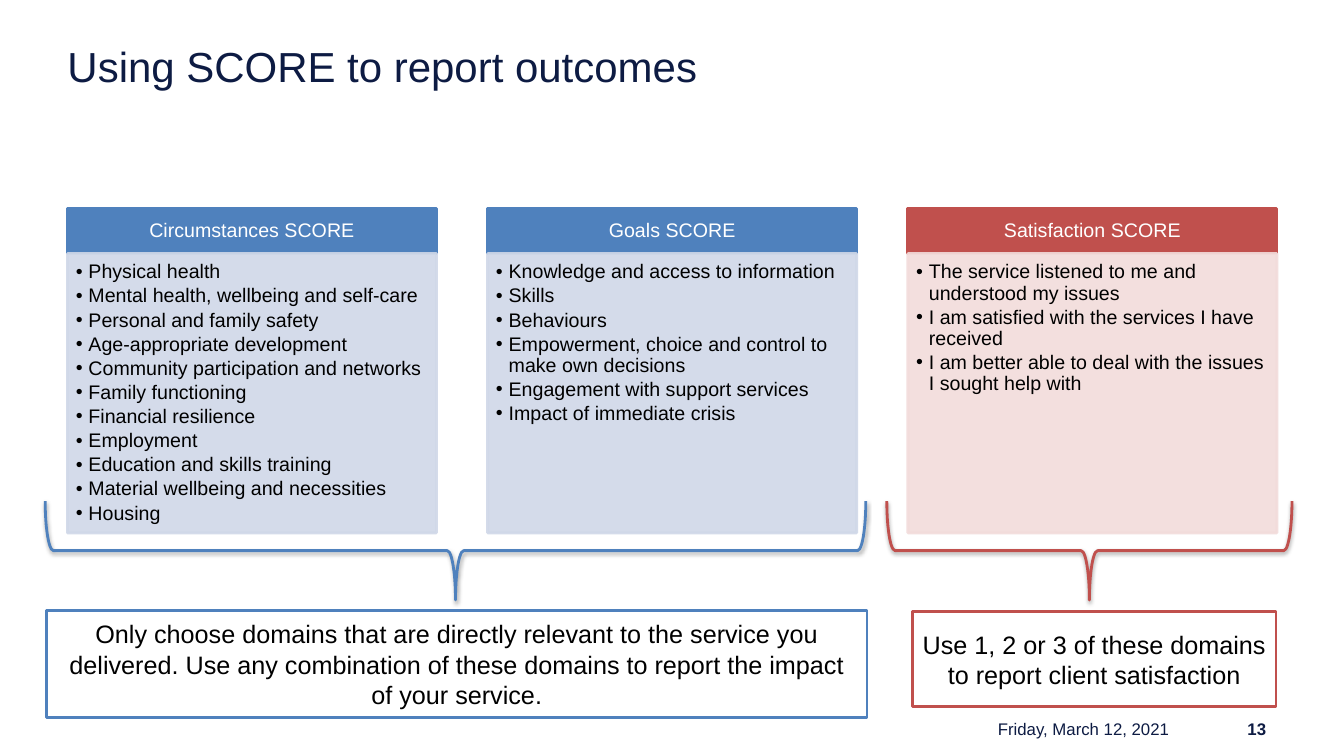
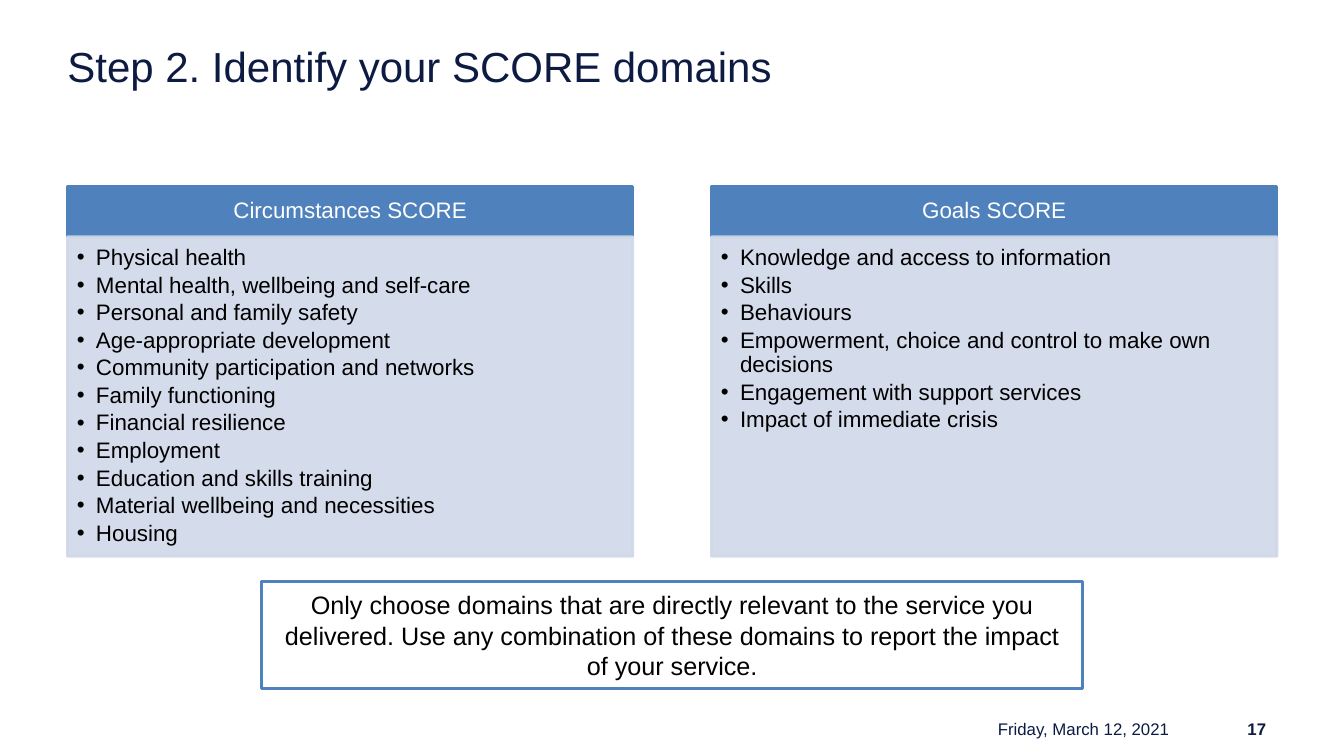
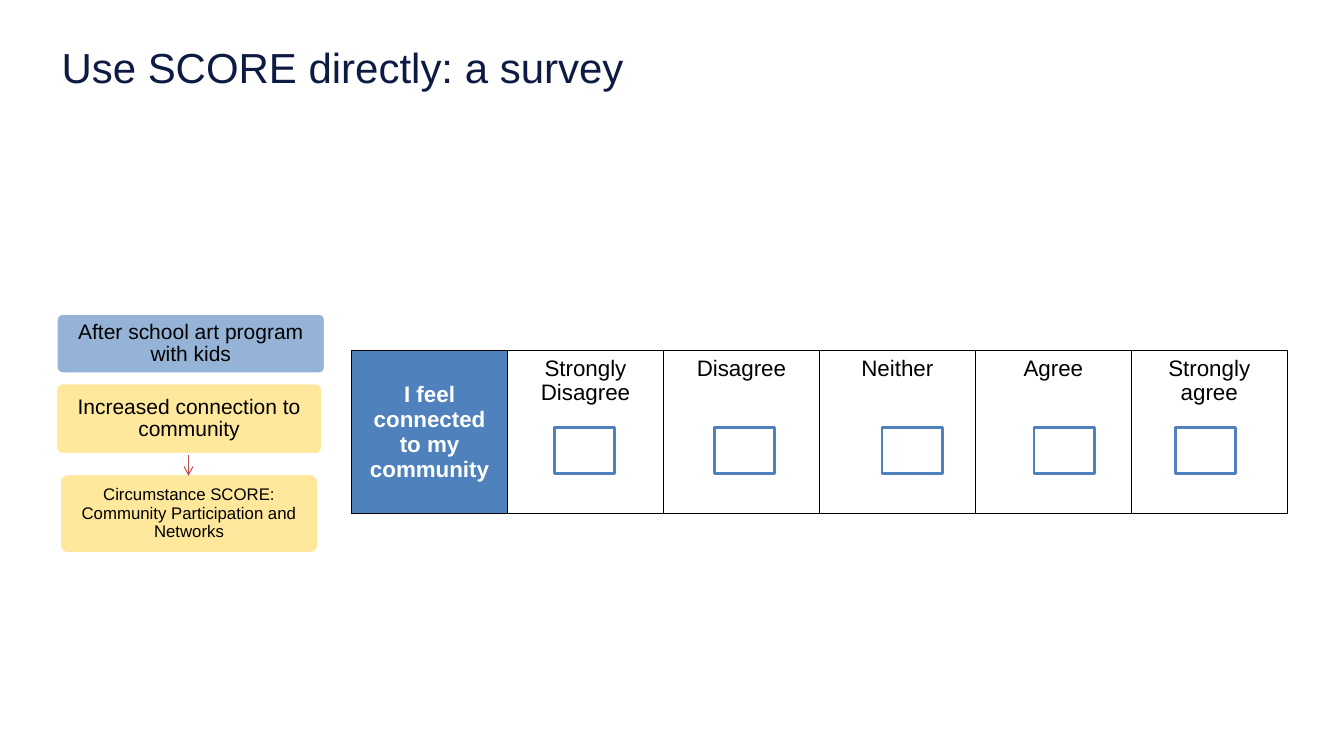
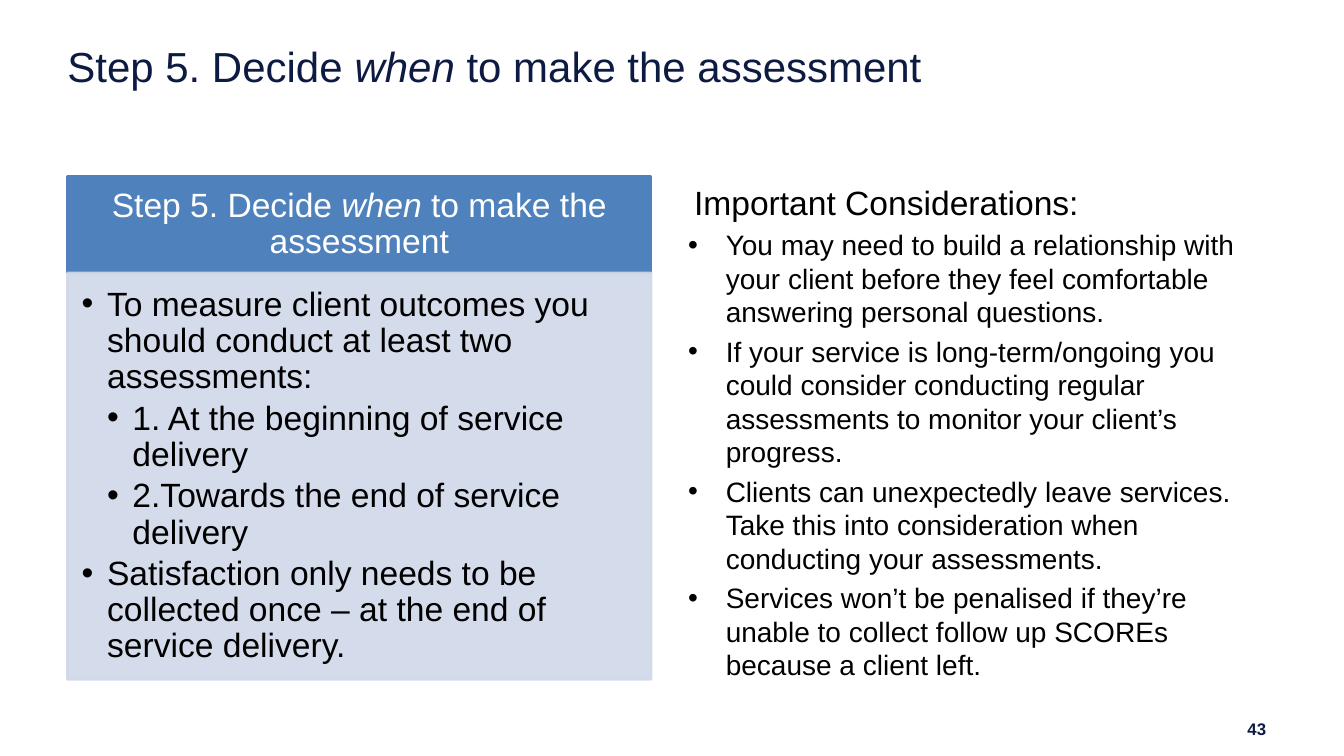
from dataclasses import dataclass
from typing import Any, NamedTuple

from lxml import etree
from pptx import Presentation
from pptx.dml.color import RGBColor
from pptx.enum.shapes import MSO_CONNECTOR, MSO_SHAPE
from pptx.enum.text import MSO_ANCHOR, MSO_AUTO_SIZE, PP_ALIGN
from pptx.oxml.ns import qn
from pptx.slide import Slide
from pptx.util import Cm, Pt

LEFT, MID, RIGHT = PP_ALIGN.LEFT, PP_ALIGN.CENTER, PP_ALIGN.RIGHT
TOP, CENTRE = MSO_ANCHOR.TOP, MSO_ANCHOR.MIDDLE
RECT, ROUND, BRACE = MSO_SHAPE.RECTANGLE, MSO_SHAPE.ROUNDED_RECTANGLE, MSO_SHAPE.LEFT_BRACE
STRAIGHT, FIXED = MSO_CONNECTOR.STRAIGHT, MSO_AUTO_SIZE.NONE
TITLE_ONLY, TITLE_BODY = 5, 1

FONT = "Arial"
NAVY, BLUE, RED = "0D1B43", "4F81BD", "C0504D"
PALE, PINK, SKY, SAND = "D0D8E8", "F2DCDB", "95B3D7", "FFE79B"
BLACK, WHITE = "000000", "FFFFFF"
MARGIN, SPAN = 1.7, 30.48
DATE = "Friday, March 12, 2021"


class Box(NamedTuple):
    left: float
    top: float
    width: float
    height: float


@dataclass
class Para:
    text: str
    mark: bool = False
    left: float = 0
    hang: float = 0
    size: float = 0
    before: float = 0


@dataclass
class Style:
    size: float
    color: str = BLACK
    align: Any = LEFT
    bold: bool = False
    lead: float = 1.0
    after: float = 0


@dataclass
class Panel:
    head: str
    items: list[str]
    dark: str = BLUE
    light: str = PALE


@dataclass
class Grid:
    top: float
    width: float
    head: float
    body: float
    size: float
    indent: float


ADVICE = ("Only choose domains that are directly relevant to the service you delivered. "
          "Use any combination of these domains to report the impact of your service.")
CIRCUMS = Panel("Circumstances SCORE", [
    "Physical health", "Mental health, wellbeing and self-care",
    "Personal and family safety", "Age-appropriate development",
    "Community participation and networks", "Family functioning",
    "Financial resilience", "Employment", "Education and skills training",
    "Material wellbeing and necessities", "Housing"])
GOALS = Panel("Goals SCORE", [
    "Knowledge and access to information", "Skills", "Behaviours",
    "Empowerment, choice and control to make own decisions",
    "Engagement with support services", "Impact of immediate crisis"])
CLIENT = Panel("Satisfaction SCORE", [
    "The service listened to me and understood my issues",
    "I am satisfied with the services I have received",
    "I am better able to deal with the issues I sought help with"], RED, PINK)
TIMING = Panel("Step 5. Decide *when* to make the assessment", [
    "To measure client outcomes you should conduct at least two assessments:",
    ">1. At the beginning of service delivery",
    ">2.Towards the end of service delivery",
    "Satisfaction only needs to be collected once – at the end of service delivery."])
ISSUES = [
    "You may need to build a relationship with your client before they feel "
    "comfortable answering personal questions.",
    "If your service is long-term/ongoing you could consider conducting regular "
    "assessments to monitor your client’s progress.",
    "Clients can unexpectedly leave services. Take this into consideration when "
    "conducting your assessments.",
    "Services won’t be penalised if they’re unable to collect follow up SCOREs "
    "because a client left."]


def rgb(color: str) -> RGBColor:
    return RGBColor.from_string(color)


def put(item: Any, values: dict[str, Any]) -> None:
    for name, value in values.items():
        setattr(item, name, value)


def node(parent: Any, tag: str, **attrs: Any) -> Any:
    return etree.SubElement(parent, qn(tag), {k: str(v) for k, v in attrs.items()})


def place(box: Box) -> list[int]:
    return [Cm(side) for side in box]


def move(item: Any, box: Box) -> None:
    put(item, dict(zip(("left", "top", "width", "height"), place(box))))


def setup(frame: Any, anchor: Any, pads: tuple[float, ...] = (0.25, 0.13, 0.25, 0.13)) -> None:
    names = ("margin_left", "margin_top", "margin_right", "margin_bottom")
    put(frame, {"word_wrap": True, "auto_size": FIXED, "vertical_anchor": anchor})
    put(frame, {name: Cm(pad) for name, pad in zip(names, pads)})


def write(frame: Any, paras: list[Para], style: Style) -> None:
    """Fill a text frame; words between asterisks become italic."""
    for i, para in enumerate(paras):
        line = frame.add_paragraph() if i else frame.paragraphs[0]
        props = line._p.get_or_add_pPr()
        props.set("marL", str(Cm(para.left)))
        props.set("indent", str(-Cm(para.hang)))
        if para.mark:
            node(props, "a:buFont", typeface=FONT)
            node(props, "a:buChar", char="•")
        else:
            node(props, "a:buNone")
        put(line, {"alignment": style.align, "line_spacing": style.lead,
                   "space_before": Pt(para.before), "space_after": Pt(style.after)})
        for j, part in enumerate(para.text.split("*")):
            run = line.add_run()
            run.text = part
            put(run.font, {"name": FONT, "size": Pt(para.size or style.size),
                           "bold": style.bold, "italic": j % 2 == 1})
            run.font.color.rgb = rgb(style.color)


def shape(slide: Slide, kind: Any, box: Box, fill: str, line: str, alpha: int = 100) -> Any:
    item = slide.shapes.add_shape(kind, *place(box))
    item.shadow.inherit = False
    item.line.width = Pt(2)
    item.line.color.rgb = rgb(line)
    if fill:
        item.fill.solid()
        item.fill.fore_color.rgb = rgb(fill)
    else:
        item.fill.background()
    if alpha < 100:
        for tint in item._element.spPr.iter(qn("a:srgbClr")):
            node(tint, "a:alpha", val=alpha * 1000)
    return item


def start(deck: Any, title: str, layout: int = TITLE_ONLY,
          box: Box = Box(MARGIN, 1.02, SPAN, 1.68)) -> Slide:
    slide = deck.slides.add_slide(deck.slide_layouts[layout])
    head = slide.shapes.title
    move(head, box)
    setup(head.text_frame, TOP, (0, 0, 0, 0))
    write(head.text_frame, [Para(title)], Style(30, NAVY))
    return slide


def footer(slide: Slide, number: str, date: str = "") -> None:
    for text, left, width, bold in ((number, 29.39, 2.77, True), (date, 21.82, 7.9, False)):
        if text:
            frame = slide.shapes.add_textbox(*place(Box(left, 18.08, width, 0.58))).text_frame
            setup(frame, CENTRE)
            write(frame, [Para(text)], Style(12, NAVY, RIGHT, bold))


def panels(slide: Slide, grid: Grid, items: list[Panel]) -> None:
    """Spread headed lists evenly over the content width."""
    pitch = (SPAN - grid.width) / max(len(items) - 1, 1)
    size = grid.size
    side, edge = 0.02 * size, 0.015 * size
    for i, panel in enumerate(items):
        left = MARGIN + i * pitch
        box = Box(left, grid.top, grid.width, grid.head)
        frame = shape(slide, RECT, box, panel.dark, panel.dark).text_frame
        setup(frame, CENTRE, (side, 0.57 * side, side, 0.57 * side))
        write(frame, [Para(panel.head)], Style(size, WHITE, MID, lead=0.9))
        box = Box(left, grid.top + grid.head, grid.width, grid.body)
        frame = shape(slide, RECT, box, panel.light, panel.light, 90).text_frame
        setup(frame, TOP, (edge, edge, side, 1.5 * edge))
        paras = [Para(text.lstrip(">"), True, grid.indent * (1 + text.startswith(">")), grid.indent)
                 for text in panel.items]
        write(frame, paras, Style(size, lead=0.9, after=round(0.15 * size, 1)))


def brace(slide: Slide, left: float, width: float, color: str) -> None:
    """Draw a brace that opens upwards, with a soft shadow."""
    top, depth = 12.63, 2.49
    shift = (width - depth) / 2
    item = shape(slide, BRACE, Box(left + shift, top - shift, depth, width), "", color)
    item.rotation = 270
    effects = item._element.spPr.find(qn("a:effectLst"))
    shade = node(effects, "a:outerShdw", blurRad=Pt(3.1), dist=Pt(1.6), dir=5400000, rotWithShape=0)
    node(node(shade, "a:srgbClr", val=BLACK), "a:alpha", val=38000)


def callout(slide: Slide, box: Box, text: str, color: str) -> None:
    frame = shape(slide, RECT, box, WHITE, color).text_frame
    setup(frame, CENTRE)
    write(frame, [Para(text)], Style(18, align=MID))


def step(slide: Slide, box: Box, text: str, fill: str, size: float) -> None:
    item = shape(slide, ROUND, box, fill, WHITE)
    item.adjustments[0] = 0.1
    setup(item.text_frame, CENTRE, (0.13, 0.08, 0.13, 0.08))
    write(item.text_frame, [Para(text)], Style(size, align=MID, lead=0.9))


def arrow(slide: Slide, x: float, top: float, end: float) -> None:
    item = slide.shapes.add_connector(STRAIGHT, Cm(x), Cm(top), Cm(x), Cm(end))
    item.line.width = Pt(0.75)
    item.line.color.rgb = rgb(RED)
    node(item.line._get_or_add_ln(), "a:tailEnd", type="arrow")
    node(item._element.spPr, "a:effectLst")


def survey(slide: Slide, box: Box, texts: list[str]) -> None:
    table = slide.shapes.add_table(1, len(texts), *place(box)).table
    put(table, {"first_row": False, "horz_banding": False})
    for i, text in enumerate(texts):
        cell = table.cell(0, i)
        props = cell._tc.get_or_add_tcPr()
        for side in ("a:lnL", "a:lnR", "a:lnT", "a:lnB"):
            line = node(props, side, w=Pt(1))
            node(node(line, "a:solidFill"), "a:srgbClr", val=BLACK)
        cell.fill.solid()
        cell.fill.fore_color.rgb = rgb(WHITE if i else BLUE)
        cell.vertical_anchor = TOP if i else CENTRE
        write(cell.text_frame, [Para(text)], Style(16, BLACK if i else WHITE, MID, not i))


def report(deck: Any) -> None:
    slide = start(deck, "Using SCORE to report outcomes")
    panels(slide, Grid(5.26, 9.3, 1.13, 7.04, 14, 0.32), [CIRCUMS, GOALS, CLIENT])
    footer(slide, "13", DATE)
    brace(slide, 1.14, 20.68, BLUE)
    brace(slide, 22.35, 10.21, RED)
    callout(slide, Box(22.99, 15.42, 9.17, 2.39),
            "Use 1, 2 or 3 of these domains to report client satisfaction", RED)
    callout(slide, Box(1.17, 15.39, 20.68, 2.69), ADVICE, BLUE)


def domains(deck: Any) -> None:
    slide = start(deck, "Step 2. Identify your SCORE domains")
    panels(slide, Grid(4.7, 14.25, 1.27, 8.05, 16, 0.48), [CIRCUMS, GOALS])
    footer(slide, "17", DATE)
    callout(slide, Box(6.6, 14.66, 20.68, 2.69), ADVICE, BLUE)


def direct(deck: Any) -> None:
    slide = start(deck, "Use SCORE directly: a survey", box=Box(1.55, 1.04, 16.43, 1.68))
    step(slide, Box(1.4, 9.65, 6.73, 1.8), "Increased connection to community", SAND, 15)
    step(slide, Box(1.42, 7.9, 6.78, 1.52), "After school art program with kids", SKY, 15)
    step(slide, Box(1.5, 11.94, 6.53, 2.01),
         "Circumstance SCORE: Community Participation and Networks", SAND, 12)
    arrow(slide, 4.75, 11.46, 11.99)
    survey(slide, Box(8.86, 8.84, 23.58, 4.09),
           ["I feel connected to my community", "Strongly Disagree", "Disagree",
            "Neither", "Agree", "Strongly agree"])
    for left in (13.97, 18.01, 22.23, 26.06, 29.62):
        shape(slide, RECT, Box(left, 10.77, 1.52, 1.17), WHITE, BLUE)


def timing(deck: Any) -> None:
    slide = start(deck, "Step 5. Decide *when* to make the assessment", TITLE_BODY)
    footer(slide, "43")
    body = slide.placeholders[1]
    move(body, Box(17.09, 4.45, 15.06, 12.75))
    setup(body.text_frame, TOP)
    paras = [Para("Important Considerations:", left=0.15, size=24)]
    paras += [Para(text, True, 0.95, 0.95, before=4) for text in ISSUES]
    write(body.text_frame, paras, Style(20))
    panels(slide, Grid(4.45, 14.71, 2.43, 10.24, 24, 0.64), [TIMING])


def main() -> None:
    deck = Presentation()
    put(deck, {"slide_width": Cm(33.87), "slide_height": Cm(19.05)})
    for build in (report, domains, direct, timing):
        build(deck)
    deck.save("out.pptx")


if __name__ == "__main__":
    main()
